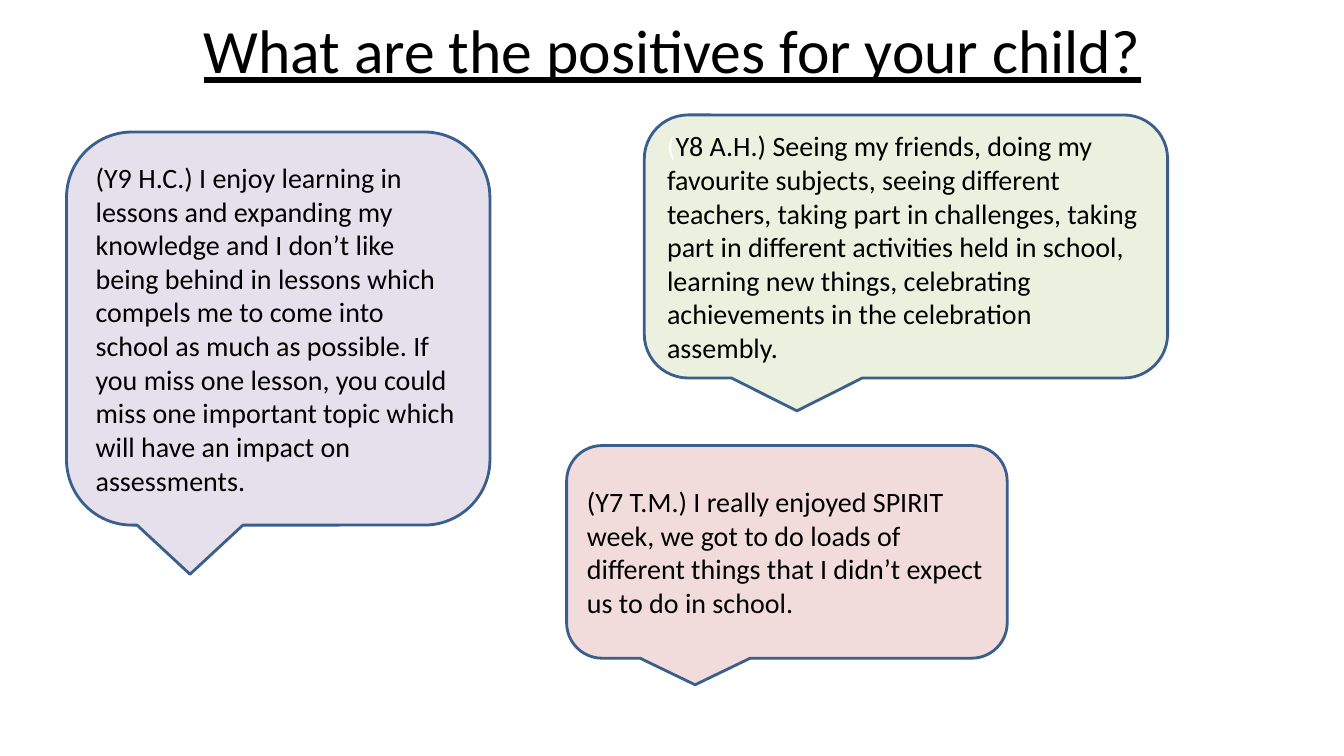
from pptx import Presentation
from pptx.dml.color import RGBColor
from pptx.enum.shapes import MSO_SHAPE as Shape
from pptx.enum.text import MSO_ANCHOR as Anchor, PP_ALIGN as Align
from pptx.util import Pt

PX = 9144  # EMU per px, 100 px to the inch
FONT = "Calibri"
BLACK = RGBColor(0x00, 0x00, 0x00)
WHITE = RGBColor(0xFF, 0xFF, 0xFF)
OUTLINE = RGBColor(0x3A, 0x5F, 0x8C)
PINK = RGBColor(0xF2, 0xDC, 0xDB)
GREEN = RGBColor(0xEB, 0xF1, 0xDE)
LILAC = RGBColor(0xE6, 0xE0, 0xEC)

PAGE_SIZE = (1333, 750)
TITLE = "What are the positives for your child?"
TITLE_AREA = (67, 0, 1200, 97)

# area (left, top, width, height), fill, runs of (text, colour)
QUOTES = [
    ((562, 442, 437, 211), PINK, [
        ("(Y7 T.M.) I really enjoyed SPIRIT week, we got to do loads of "
         "different things that I didn’t expect us to do in school.", BLACK),
    ]),
    ((639, 114, 519, 261), GREEN, [
        ("(", WHITE),
        ("Y8 A.H.) Seeing my friends, doing my favourite subjects, seeing "
         "different teachers, taking part in challenges, taking part in "
         "different activities held in school, learning new things, "
         "celebrating achievements in the celebration assembly.", BLACK),
    ]),
    ((66, 131, 420, 390), LILAC, [
        ("(Y9 H.C.) I enjoy learning in lessons and expanding my knowledge "
         "and I don’t like being behind in lessons which compels me to come "
         "into school as much as possible. If you miss one lesson, you could "
         "miss one important topic which will have an impact on assessments.",
         BLACK),
    ]),
]


def to_emu(lengths):
    return [length * PX for length in lengths]


def write(box, runs, size, align, underline=False):
    frame = box.text_frame
    frame.word_wrap = True
    frame.vertical_anchor = Anchor.MIDDLE
    para = frame.paragraphs[0]
    para.alignment = align
    for text, colour in runs:
        span = para.add_run()
        span.text = text
        span.font.name = FONT
        span.font.size = Pt(size)
        span.font.underline = underline
        span.font.color.rgb = colour


def add_quote(page, area, fill, runs):
    bubble = page.shapes.add_shape(Shape.ROUNDED_RECTANGULAR_CALLOUT, *to_emu(area))
    bubble.shadow.inherit = False
    bubble.fill.solid()
    bubble.fill.fore_color.rgb = fill
    bubble.line.color.rgb = OUTLINE
    bubble.line.width = Pt(2)
    write(bubble, runs, 20, Align.LEFT)


def main():
    deck = Presentation()
    deck.slide_width, deck.slide_height = to_emu(PAGE_SIZE)
    page = deck.slides.add_slide(deck.slide_layouts[6])
    title = page.shapes.add_textbox(*to_emu(TITLE_AREA))
    write(title, [(TITLE, BLACK)], 44, Align.CENTER, underline=True)
    for area, fill, runs in QUOTES:
        add_quote(page, area, fill, runs)
    deck.save("out.pptx")


if __name__ == "__main__":
    main()
